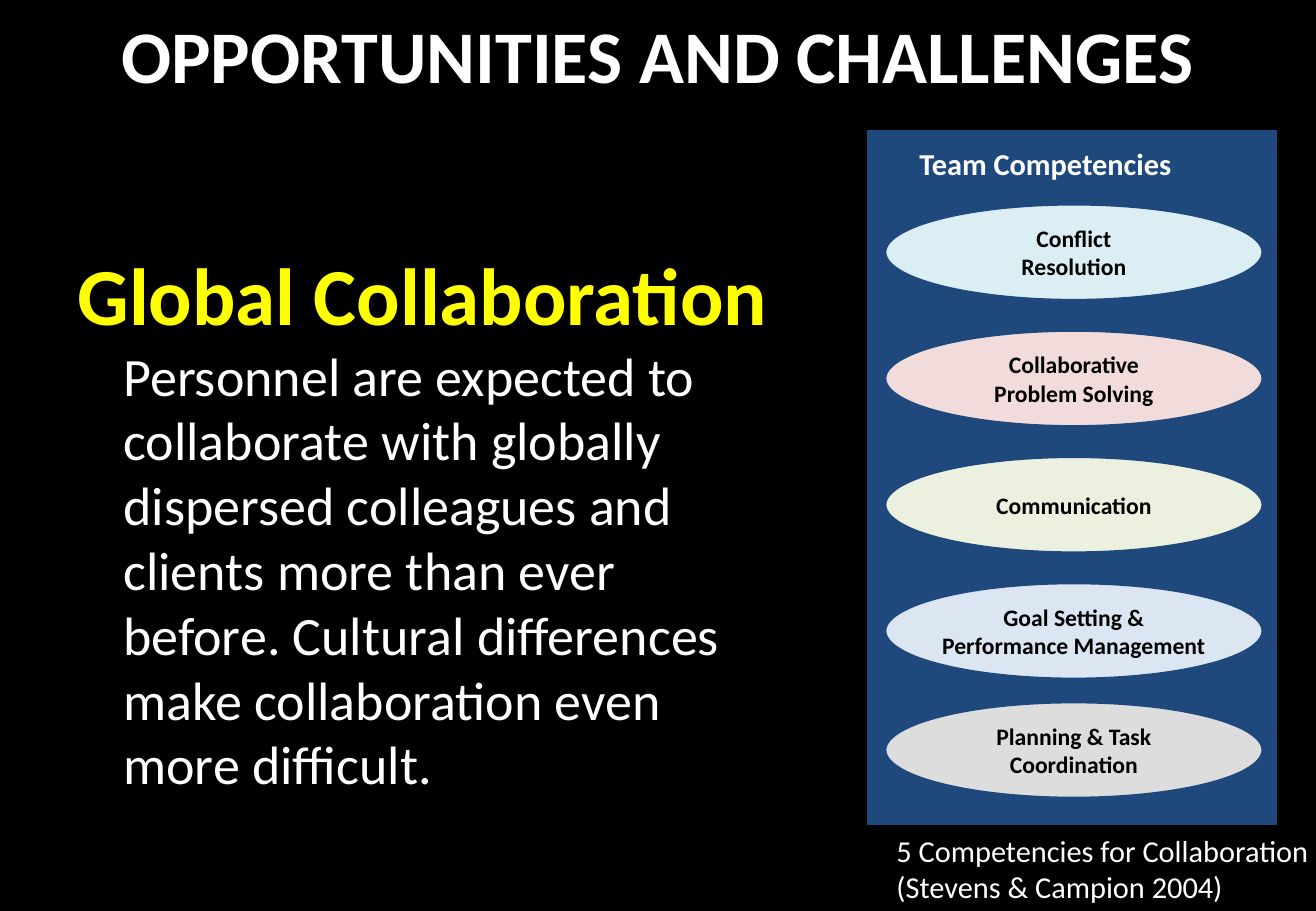
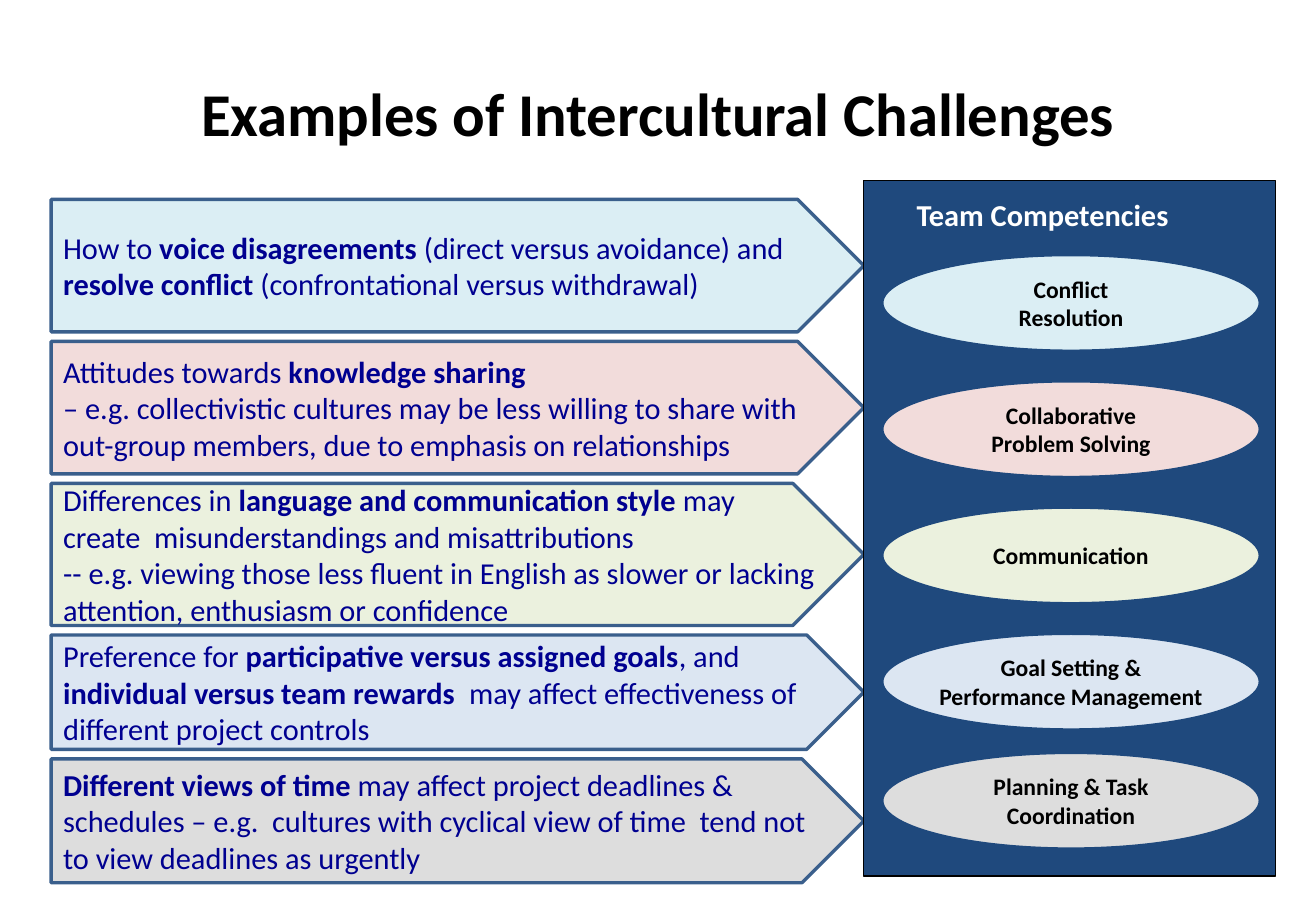
from pptx import Presentation
from pptx.dml.color import RGBColor
from pptx.enum.shapes import MSO_SHAPE as Shape
from pptx.enum.text import MSO_ANCHOR as Anchor, PP_ALIGN as Align
from pptx.util import Cm, Pt

FONT = "Calibri"
BLACK = RGBColor(0x00, 0x00, 0x00)
WHITE = RGBColor(0xFF, 0xFF, 0xFF)
YELLOW = RGBColor(0xFF, 0xFF, 0x00)
NAVY = RGBColor(0x1F, 0x49, 0x7D)
STEEL = RGBColor(0x3A, 0x5F, 0x8C)
INK = RGBColor(0x00, 0x00, 0x90)
ICE = RGBColor(0xDB, 0xEE, 0xF4)
ROSE = RGBColor(0xF2, 0xDC, 0xDB)
LIME = RGBColor(0xEB, 0xF1, 0xDE)
SKY = RGBColor(0xDC, 0xE6, 0xF2)
GREY = RGBColor(0xDD, 0xDD, 0xDD)

PAGE_WIDTH, PAGE_HEIGHT = 27.51, 19.05
ARROW_GAP = 0.2

COMPETENCIES = [
    (1.55, ICE, ["Conflict", "Resolution"]),
    (4.19, ROSE, ["Collaborative", "Problem Solving"]),
    (6.83, LIME, ["Communication"]),
    (9.47, SKY, ["Goal Setting &", "Performance Management"]),
    (11.96, GREY, ["Planning & Task", "Coordination"]),
]

CHALLENGES = [
    (2.77, ICE, [
        "How to *voice disagreements *(direct versus avoidance) and "
        "*resolve conflict *(confrontational versus withdrawal)"]),
    (2.77, ROSE, [
        "Attitudes towards *knowledge sharing*",
        "– e.g. collectivistic cultures may be less willing to share with "
        "out-group members, due to emphasis on relationships"]),
    (2.97, LIME, [
        "Differences in *language and communication style *may "
        "create  misunderstandings and misattributions",
        "-- e.g. viewing those less fluent in English as slower or lacking "
        "attention, enthusiasm or confidence"]),
    (2.39, SKY, [
        "Preference for *participative versus assigned goals*, and "
        "*individual versus team rewards  *may affect effectiveness of "
        "different project controls"]),
    (2.59, GREY, [
        "*Different views of time *may affect project deadlines & schedules "
        "– e.g.  cultures with cyclical view of time  tend not to view "
        "deadlines as urgently"]),
]


def write(shape, lines, size, color, bold=False, align=Align.LEFT, anchor=Anchor.TOP,
          wrap=True, hanging=0, right_inset=0.25, accent_size=None, accent_color=None):
    frame = shape.text_frame
    frame.word_wrap = wrap
    frame.vertical_anchor = anchor
    frame.margin_right = Cm(right_inset)
    for number, line in enumerate(lines):
        para = frame.add_paragraph() if number else frame.paragraphs[0]
        para.alignment = align
        if hanging:
            props = para._p.get_or_add_pPr()
            props.set("marL", str(Cm(hanging)))
            props.set("indent", str(-Cm(hanging)))
        for part, words in enumerate(line.split("*")):
            if not words:
                continue
            accent = part % 2 == 1
            span = para.add_run()
            span.text = words
            span.font.name = FONT
            span.font.bold = bold or accent
            span.font.size = Pt(accent_size if accent and accent_size else size)
            span.font.color.rgb = accent_color if accent and accent_color else color


def add_text(page, left, top, width, height, lines, **style):
    box = page.shapes.add_textbox(Cm(left), Cm(top), Cm(width), Cm(height))
    write(box, lines, **style)


def add_block(page, kind, left, top, width, height, fill, line, weight):
    block = page.shapes.add_shape(kind, Cm(left), Cm(top), Cm(width), Cm(height))
    block.shadow.inherit = False
    block.fill.solid()
    block.fill.fore_color.rgb = fill
    block.line.color.rgb = line
    block.line.width = Pt(weight)
    return block


def add_page(deck, background, title, top, height, size, color):
    page = deck.slides.add_slide(deck.slide_layouts[6])
    page.background.fill.solid()
    page.background.fill.fore_color.rgb = background
    add_text(page, 1.37, top, 24.77, height, [title], size=size, color=color,
             bold=True, align=Align.CENTER, anchor=Anchor.MIDDLE)
    return page


def add_competency_panel(page, left, top):
    add_block(page, Shape.RECTANGLE, left, top, 8.61, 14.55, NAVY, BLACK, 0.75)
    for offset, fill, lines in COMPETENCIES:
        oval = add_block(page, Shape.OVAL, left + 0.38, top + offset, 7.92, 2.03,
                         fill, NAVY, 2.25)
        write(oval, lines, size=14, color=BLACK, bold=True, align=Align.CENTER,
              anchor=Anchor.MIDDLE, wrap=False)
    add_text(page, left + 0.86, top + 0.2, 5.84, 1.02, ["Team Competencies"],
             size=18, color=WHITE, bold=True, wrap=False)


def add_challenge_arrows(page, left, top, width):
    for height, fill, lines in CHALLENGES:
        arrow = add_block(page, Shape.PENTAGON, left, top, width, height, fill, STEEL, 2)
        write(arrow, lines, size=18, color=INK, anchor=Anchor.MIDDLE)
        top += height + ARROW_GAP


def build_opportunities(deck):
    page = add_page(deck, BLACK, "OPPORTUNITIES AND CHALLENGES", 0, 2.26, 44, WHITE)
    add_text(page, 1.37, 5.0, 15.19, 12.57, [
        "*Global Collaboration *Personnel are expected to collaborate with "
        "globally dispersed colleagues and clients more than ever before. "
        "Cultural differences make collaboration even more difficult."],
        size=32, color=WHITE, hanging=0.96, accent_size=48, accent_color=YELLOW)
    add_competency_panel(page, 18.11, 2.71)
    add_text(page, 18.49, 17.27, PAGE_WIDTH - 18.49, PAGE_HEIGHT - 17.27,
             ["5 Competencies for Collaboration", "(Stevens & Campion 2004)"],
             size=18, color=WHITE, right_inset=0)


def build_challenges(deck):
    page = add_page(deck, WHITE, "Examples of Intercultural Challenges", 0.76, 3.18, 36, BLACK)
    add_challenge_arrows(page, 1.07, 4.17, 16.99)
    add_competency_panel(page, 18.05, 3.77)


def main():
    deck = Presentation()
    deck.slide_width, deck.slide_height = Cm(PAGE_WIDTH), Cm(PAGE_HEIGHT)
    build_opportunities(deck)
    build_challenges(deck)
    deck.save("out.pptx")


if __name__ == "__main__":
    main()
